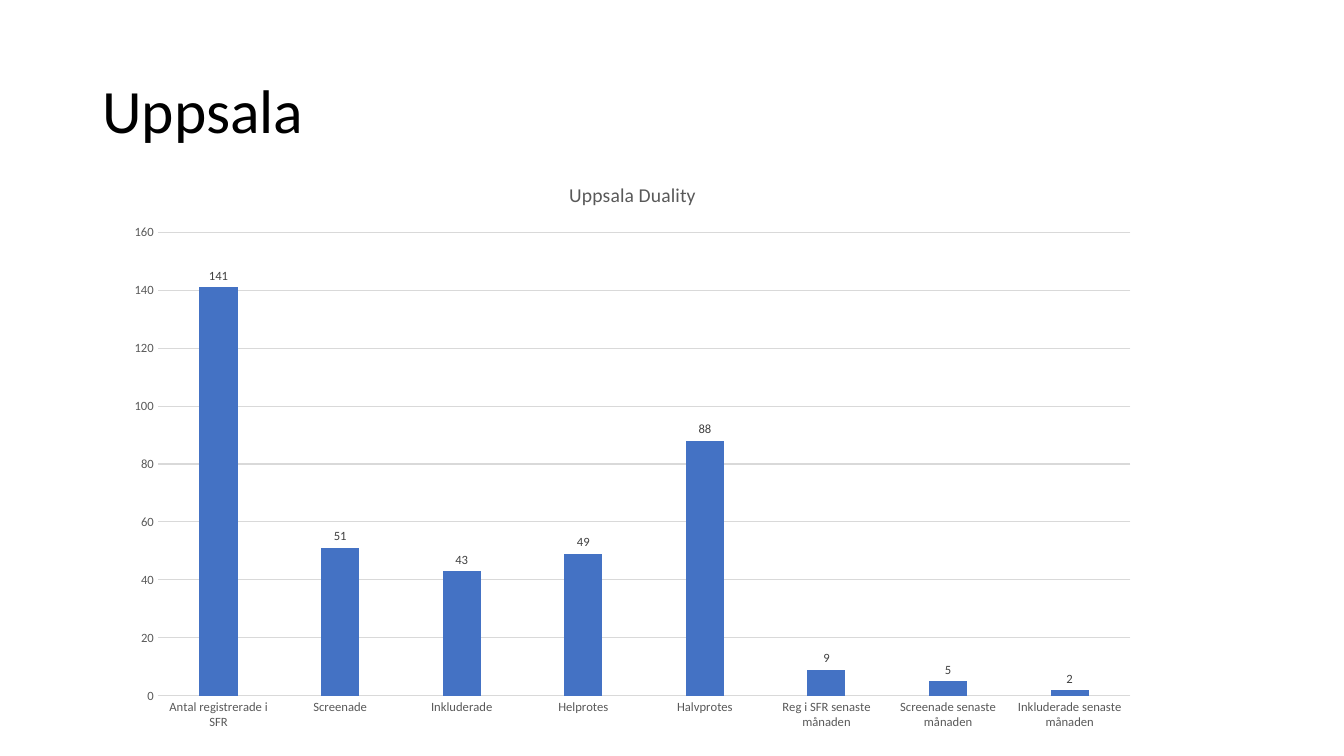
from pptx import Presentation
from pptx.chart.data import CategoryChartData
from pptx.dml.color import RGBColor
from pptx.enum.chart import XL_CHART_TYPE, XL_LABEL_POSITION, XL_TICK_MARK
from pptx.enum.text import MSO_ANCHOR
from pptx.util import Cm, Pt

FONT = "Calibri"
COLORS = {
    "title": "000000",
    "chart_text": "595959",
    "label": "404040",
    "grid": "D9D9D9",
    "bar": "4472C4",
}
COUNTS = {
    "Antal registrerade i SFR": 141,
    "Screenade": 51,
    "Inkluderade": 43,
    "Helprotes": 49,
    "Halvprotes": 88,
    "Reg i SFR senaste månaden": 9,
    "Screenade senaste månaden": 5,
    "Inkluderade senaste månaden": 2,
}


def color(name):
    return RGBColor.from_string(COLORS[name])


def style_font(font, size, color_name):
    font.name = FONT
    font.size = Pt(size)
    font.bold = False
    font.color.rgb = color(color_name)


def style_line(line):
    line.color.rgb = color("grid")
    line.width = Pt(0.75)


def add_title(slide, text, left, top, width, height):
    box = slide.shapes.add_textbox(left, top, width, height)
    frame = box.text_frame
    frame.word_wrap = True
    frame.vertical_anchor = MSO_ANCHOR.MIDDLE
    frame.text = text
    para = frame.paragraphs[0]
    para.line_spacing = 0.9
    style_font(para.runs[0].font, 44, "title")


def add_count_chart(slide, title, counts, left, top, width, height):
    data = CategoryChartData()
    data.categories = list(counts)
    data.add_series(title, list(counts.values()))
    chart = slide.shapes.add_chart(
        XL_CHART_TYPE.COLUMN_CLUSTERED, left, top, width, height, data
    ).chart
    style_font(chart.font, 10, "title")
    chart.has_legend = False
    chart.has_title = True
    chart.chart_title.include_in_layout = False
    para = chart.chart_title.text_frame.paragraphs[0]
    para.text = title
    style_font(para.runs[0].font, 14, "chart_text")

    for axis in (chart.category_axis, chart.value_axis):
        axis.major_tick_mark = XL_TICK_MARK.NONE
        axis.minor_tick_mark = XL_TICK_MARK.NONE
        style_font(axis.tick_labels.font, 9, "chart_text")
    style_line(chart.category_axis.format.line)
    chart.value_axis.format.line.fill.background()
    chart.value_axis.minimum_scale = 0
    chart.value_axis.maximum_scale = 160
    chart.value_axis.major_unit = 20
    style_line(chart.value_axis.major_gridlines.format.line)

    plot = chart.plots[0]
    plot.gap_width = 219
    plot.overlap = -27
    plot.vary_by_categories = False
    bars = plot.series[0]
    bars.format.fill.solid()
    bars.format.fill.fore_color.rgb = color("bar")
    labels = bars.data_labels
    labels.show_value = True
    labels.position = XL_LABEL_POSITION.OUTSIDE_END
    style_font(labels.font, 9, "label")


def main():
    deck = Presentation()
    deck.slide_width = Cm(33.87)
    deck.slide_height = Cm(19.05)
    slide = deck.slides.add_slide(deck.slide_layouts[6])
    add_title(slide, "Uppsala", Cm(2.33), Cm(1.01), Cm(29.21), Cm(3.68))
    add_count_chart(slide, "Uppsala Duality", COUNTS,
                    Cm(2.87), Cm(4.04), Cm(26.14), Cm(14.63))
    deck.save("out.pptx")


if __name__ == "__main__":
    main()
